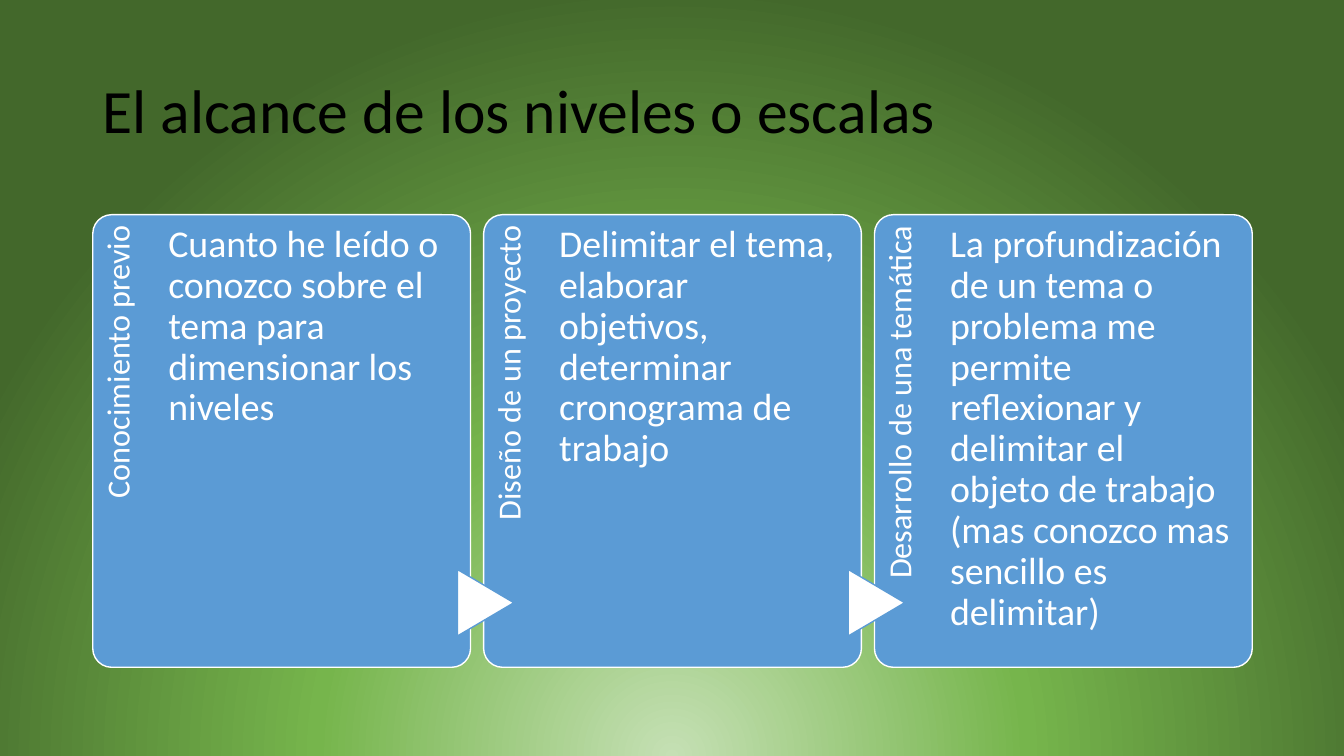
from lxml import etree
from pptx import Presentation
from pptx.dml.color import RGBColor
from pptx.enum.shapes import MSO_SHAPE
from pptx.enum.text import MSO_ANCHOR, PP_ALIGN
from pptx.oxml import parse_xml
from pptx.oxml.ns import nsdecls, qn
from pptx.util import Inches, Pt

BLACK = RGBColor(0x00, 0x00, 0x00)
WHITE = RGBColor(0xFF, 0xFF, 0xFF)
BLUE = RGBColor(0x5B, 0x9B, 0xD5)
GLOW = [
    (0, RGBColor(0xC5, 0xE0, 0xB4)),
    (46, RGBColor(0x76, 0xB5, 0x4C)),
    (100, RGBColor(0x43, 0x68, 0x2B)),
]
FONT = "Calibri"
WIDTH, HEIGHT = 13.33, 7.5
MARGIN, CONTENT_WIDTH = 0.92, 11.5
CARD_TOP, CARD_HEIGHT, CARD_GAP = 2.13, 4.49, 0.13
LEVELS = [
    ("Conocimiento previo",
     "Cuanto he leído o conozco sobre el tema para dimensionar los niveles"),
    ("Diseño de un proyecto",
     "Delimitar el tema, elaborar objetivos, determinar cronograma de trabajo"),
    ("Desarrollo de una temática",
     "La profundización de un tema o problema me permite reflexionar y delimitar "
     "el objeto de trabajo (mas conozco mas sencillo es delimitar)"),
]


def paint_background(s):
    s.background.fill.gradient()
    grad = s.element.find(".//" + qn("a:gradFill"))
    for child in list(grad):
        grad.remove(child)
    stops = etree.SubElement(grad, qn("a:gsLst"))
    for position, color in GLOW:
        stop = etree.SubElement(stops, qn("a:gs"), pos=str(position * 1000))
        etree.SubElement(stop, qn("a:srgbClr"), val=str(color))
    grad.append(parse_xml(
        f'<a:path {nsdecls("a")} path="circle">'
        '<a:fillToRect l="50000" t="130000" r="50000" b="-30000"/></a:path>'))


def add_text(s, box, text, size, color, insets, anchor=MSO_ANCHOR.TOP,
             align=PP_ALIGN.LEFT):
    sp = s.shapes.add_textbox(*map(Inches, box))
    tf = sp.text_frame
    tf.word_wrap = True
    tf.vertical_anchor = anchor
    tf.margin_left, tf.margin_top, tf.margin_right, tf.margin_bottom = map(Inches, insets)
    tf.text = text
    p = tf.paragraphs[0]
    p.alignment = align
    p.line_spacing = 0.9
    font = p.runs[0].font
    font.name, font.size, font.color.rgb = FONT, Pt(size), color
    return sp


def add_outlined(s, kind, box, fill, line):
    sp = s.shapes.add_shape(kind, *map(Inches, box))
    sp.shadow.inherit = False
    sp.fill.solid()
    sp.fill.fore_color.rgb = fill
    sp.line.color.rgb = line
    sp.line.width = Pt(1)
    return sp


def add_title(s, box):
    add_text(s, box, "El alcance de los niveles o escalas", 44, BLACK,
             (0.1, 0.05, 0.1, 0.05), MSO_ANCHOR.MIDDLE)


def add_arrow(s, left, top):
    sp = add_outlined(s, MSO_SHAPE.FLOWCHART_EXTRACT, (left, top, 0.66, 0.56), WHITE, BLUE)
    sp.rotation = 90


def add_card(s, box, label, body, has_arrow):
    left, top, width, height = box
    card = add_outlined(s, MSO_SHAPE.ROUNDED_RECTANGLE, box, BLUE, WHITE)
    card.adjustments[0] = 0.05
    strip, length = width * 0.2, height * 0.82
    label_box = (left + (strip - length) / 2, top + (length - strip) / 2, length, strip)
    sp = add_text(s, label_box, label, 23, WHITE, (0, 0.09, 0.11, 0), align=PP_ALIGN.RIGHT)
    sp.rotation = 270
    if has_arrow:
        add_arrow(s, left - 0.31, top + 3.57)
    add_text(s, (left + strip, top, width * 0.745, height), body, 27, WHITE, (0, 0.1, 0, 0))


def add_levels(s, box):
    left, top, width, height = box
    card_width = (width - CARD_GAP * (len(LEVELS) - 1)) / len(LEVELS)
    for i, (label, body) in enumerate(LEVELS):
        card_left = left + i * (card_width + CARD_GAP)
        add_card(s, (card_left, top, card_width, height), label, body, i > 0)


def main():
    prs = Presentation()
    prs.slide_width, prs.slide_height = Inches(WIDTH), Inches(HEIGHT)
    s = prs.slides.add_slide(prs.slide_layouts[6])
    paint_background(s)
    add_title(s, (MARGIN, 0.4, CONTENT_WIDTH, 1.45))
    add_levels(s, (MARGIN, CARD_TOP, CONTENT_WIDTH, CARD_HEIGHT))
    prs.save("out.pptx")


if __name__ == "__main__":
    main()
